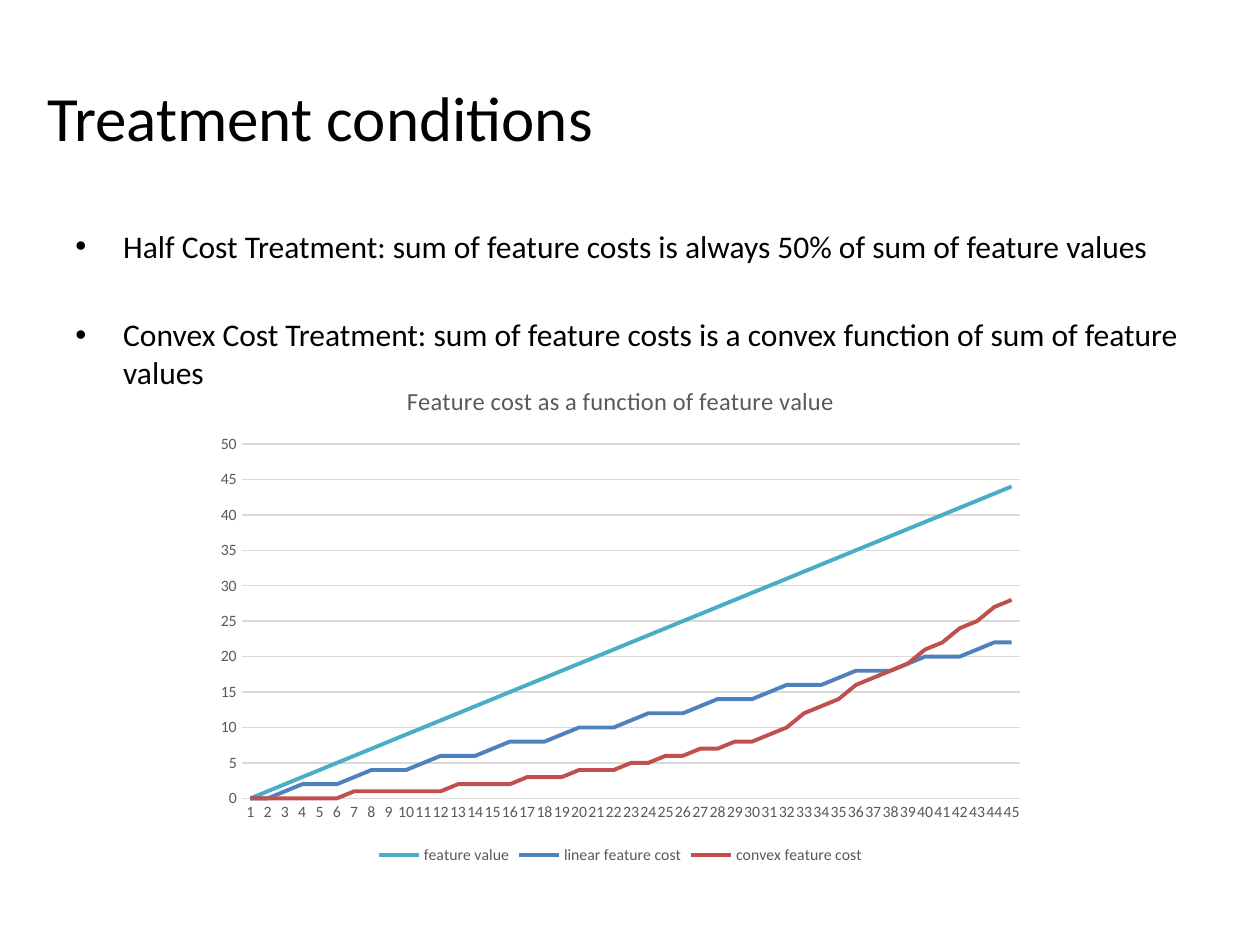
from lxml import etree
from pptx import Presentation
from pptx.chart.data import CategoryChartData
from pptx.dml.color import RGBColor
from pptx.enum.chart import XL_CHART_TYPE as ChartType, XL_LEGEND_POSITION as LegendPos
from pptx.enum.chart import XL_TICK_MARK as Tick
from pptx.enum.text import MSO_ANCHOR as Anchor
from pptx.oxml.ns import qn
from pptx.util import Inches, Pt

BLACK = RGBColor(0x00, 0x00, 0x00)
GRAY = RGBColor(0x59, 0x59, 0x59)
GRID = RGBColor(0xD9, 0xD9, 0xD9)
TEAL = RGBColor(0x4B, 0xAC, 0xC6)
BLUE = RGBColor(0x4F, 0x81, 0xBD)
RED = RGBColor(0xC0, 0x50, 0x4D)

CONVEX_COSTS = [0, 0, 0, 0, 0, 0, 1, 1, 1, 1,
                1, 1, 2, 2, 2, 2, 3, 3, 3, 4,
                4, 4, 5, 5, 6, 6, 7, 7, 8, 8,
                9, 10, 12, 13, 14, 16, 17, 18, 19, 21,
                22, 24, 25, 27, 28]


class SlideBuilder:
    font = "Calibri"

    def __init__(self, slide):
        self.s = slide

    def style(self, font, size, color):
        font.name = self.font
        font.size = Pt(size)
        font.color.rgb = color

    def text(self, box, lines, size, anchor=Anchor.TOP, bullets=False, gap=0):
        tf = self.s.shapes.add_textbox(*map(Inches, box)).text_frame
        tf.word_wrap = True
        tf.vertical_anchor = anchor
        for i, line in enumerate(lines):
            p = tf.add_paragraph() if i else tf.paragraphs[0]
            p.text = line
            self.style(p.runs[0].font, size, BLACK)
            if i:
                p.space_before = Pt(gap)
            if bullets:
                self.bullet(p)

    def bullet(self, p, indent=0.38):
        pPr = p._p.get_or_add_pPr()
        pPr.set("marL", str(Inches(indent)))
        pPr.set("indent", str(-Inches(indent)))
        etree.SubElement(pPr, qn("a:buFont"), typeface="Arial")
        etree.SubElement(pPr, qn("a:buChar"), char="•")

    def line_chart(self, box, title, categories, series):
        data = CategoryChartData()
        data.categories = categories
        for name, values, _ in series:
            data.add_series(name, values)
        chart = self.s.shapes.add_chart(
            ChartType.LINE, *map(Inches, box), data).chart
        self.style(chart.font, 10, BLACK)

        # Title and legend
        tf = chart.chart_title.text_frame
        tf.text = title
        r = tf.paragraphs[0].runs[0]
        self.style(r.font, 14, GRAY)
        r.font.bold = False
        chart.has_legend = True
        chart.legend.position = LegendPos.BOTTOM
        chart.legend.include_in_layout = False
        self.style(chart.legend.font, 9, GRAY)

        # Axes
        cat, val = chart.category_axis, chart.value_axis
        for axis in (cat, val):
            axis.major_tick_mark = axis.minor_tick_mark = Tick.NONE
            self.style(axis.tick_labels.font, 9, GRAY)
        val.minimum_scale, val.maximum_scale, val.major_unit = 0, 50, 5
        val.format.line.fill.background()
        val.has_major_gridlines = True
        for line in (cat.format.line, val.major_gridlines.format.line):
            line.color.rgb = GRID
            line.width = Pt(0.75)

        # Series
        plot = chart.plots[0]
        plot.vary_by_categories = False
        for ser, (_, _, color) in zip(plot.series, series):
            ser.smooth = False
            ser.format.line.color.rgb = color
            ser.format.line.width = Pt(2.25)


def main():
    prs = Presentation()
    prs.slide_width, prs.slide_height = Inches(10), Inches(7.5)
    b = SlideBuilder(prs.slides.add_slide(prs.slide_layouts[6]))

    # Treatments
    b.text((0.5, 1.75, 9, 4.95), [
        "Half Cost Treatment: sum of feature costs is always 50% of sum of feature values",
        "Convex Cost Treatment: sum of feature costs is a convex function of sum of feature values",
    ], 18, bullets=True, gap=29)

    # Cost curves
    values = range(len(CONVEX_COSTS))
    b.line_chart(
        (1.62, 2.88, 6.61, 4.02),
        "Feature cost as a function of feature value",
        [str(v + 1) for v in values],
        [("feature value", list(values), TEAL),
         ("linear feature cost", [round(v / 2) for v in values], BLUE),
         ("convex feature cost", CONVEX_COSTS, RED)])

    # Title
    b.text((0.28, 0.3, 9.53, 1.25), ["Treatment conditions"], 36, Anchor.MIDDLE)

    prs.save("out.pptx")


if __name__ == "__main__":
    main()
